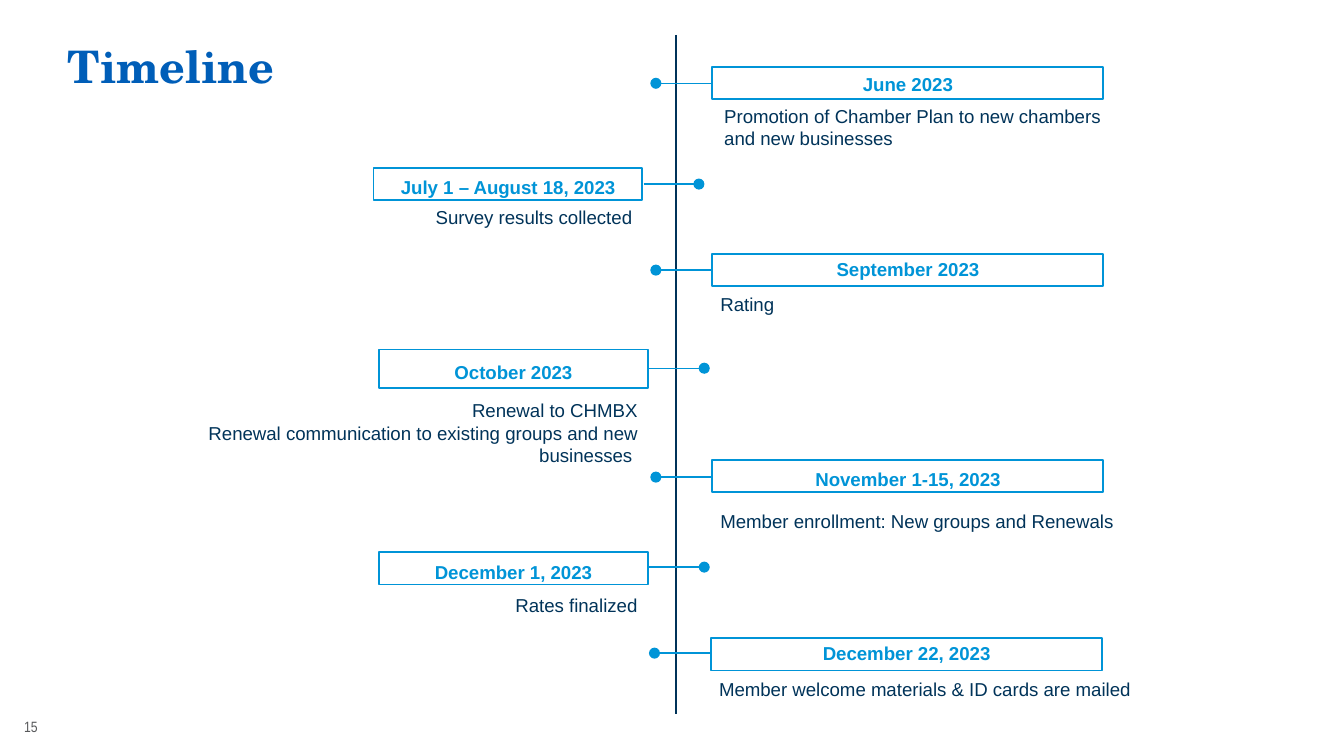
from dataclasses import dataclass

from lxml import etree
from pptx import Presentation
from pptx.dml.color import RGBColor
from pptx.enum.shapes import MSO_CONNECTOR, MSO_SHAPE
from pptx.enum.text import MSO_ANCHOR, PP_ALIGN
from pptx.oxml.ns import qn
from pptx.util import Inches, Pt

NAVY = RGBColor(0x00, 0x33, 0x59)
SKY = RGBColor(0x00, 0x94, 0xD7)
TITLE_BLUE = RGBColor(0x00, 0x5E, 0xB8)
GRAY = RGBColor(0x58, 0x59, 0x5B)

LEFT, CENTER, RIGHT = PP_ALIGN.LEFT, PP_ALIGN.CENTER, PP_ALIGN.RIGHT
TOP, MIDDLE = MSO_ANCHOR.TOP, MSO_ANCHOR.MIDDLE
RECTANGLE = MSO_SHAPE.RECTANGLE
STRAIGHT = MSO_CONNECTOR.STRAIGHT

SLIDE_WIDTH = Inches(10)
SLIDE_HEIGHT = SLIDE_WIDTH * 9 // 16
SPINE_X = 5.03


@dataclass(frozen=True)
class Side:
    """Horizontal layout shared by the events on one side of the spine."""
    box_left: float
    box_width: float
    stem_start: float
    dot_x: float
    text_left: float
    text_width: float
    align: PP_ALIGN
    anchor: MSO_ANCHOR
    insets: tuple


BEFORE = Side(2.82, 2, 4.83, 5.24, 1.39, 3.45, RIGHT, TOP, (0.1, 0.05))
AFTER = Side(5.3, 2.91, 5.3, 4.88, 5.3, 3.35, LEFT, MIDDLE, (0.06, 0.03))
AFTER_WRAPPED = Side(5.3, 2.91, 5.3, 4.88, 5.29, 3.23, LEFT, TOP, (0.1, 0.05))


@dataclass(frozen=True)
class Event:
    date: str
    details: tuple
    side: Side
    box_top: float
    stem_y: float
    text_top: float
    line_spacing: float = 1.3
    box_height: float = 0.24
    text_height: float = 0.31
    shift: float = 0


EVENTS = (
    Event("June 2023",
          ("Promotion of Chamber Plan to new chambers and new businesses",),
          AFTER_WRAPPED, 0.5, 0.62, 0.73, line_spacing=1.1),
    Event("July 1 – August 18, 2023", ("Survey results collected",),
          BEFORE, 1.25, 1.37, 1.48, shift=-0.04),
    Event("September 2023", ("Rating",),
          AFTER, 1.89, 2.01, 2.11, line_spacing=0.9),
    Event("October 2023",
          ("Renewal to CHMBX",
           "Renewal communication to existing groups and new businesses "),
          BEFORE, 2.6, 2.74, 2.92, box_height=0.29, text_height=0.62),
    Event("November 1-15, 2023",
          ("Member enrollment: New groups and Renewals",),
          AFTER, 3.42, 3.55, 3.72),
    Event("December 1, 2023", ("Rates finalized",),
          BEFORE, 4.11, 4.22, 4.37),
    Event("December 22, 2023",
          ("Member welcome materials & ID cards are mailed",),
          AFTER, 4.75, 4.86, 4.97, line_spacing=0.9, shift=-0.01),
)


def write(shape, lines, size, color, font="Arial", bold=False, align=LEFT,
          anchor=TOP, insets=(0, 0), line_spacing=None):
    frame = shape.text_frame
    frame.word_wrap = True
    frame.vertical_anchor = anchor
    frame.margin_left = frame.margin_right = Inches(insets[0])
    frame.margin_top = frame.margin_bottom = Inches(insets[1])
    frame.text = "\n".join(lines)
    for paragraph in frame.paragraphs:
        paragraph.alignment = align
        paragraph.line_spacing = line_spacing
        paragraph.font.name = font
        paragraph.font.size = Pt(size)
        paragraph.font.bold = bold
        paragraph.font.color.rgb = color


def add_text(slide, bounds, lines, size, color, **style):
    box = slide.shapes.add_textbox(*map(Inches, bounds))
    write(box, lines, size, color, **style)


def add_line(slide, start, end, color, width, dot=False):
    """Draw a straight line, with a round dot at its end if asked."""
    line = slide.shapes.add_connector(STRAIGHT, *map(Inches, (*start, *end)))
    line.line.color.rgb = color
    line.line.width = Pt(width)
    if dot:
        outline = line.line._get_or_add_ln()
        etree.SubElement(outline, qn("a:tailEnd"), type="oval")
    etree.SubElement(line._element.spPr, qn("a:effectLst"))


def add_date_box(slide, bounds, date, **style):
    box = slide.shapes.add_shape(RECTANGLE, *map(Inches, bounds))
    box.shadow.inherit = False
    box.fill.background()
    box.line.color.rgb = SKY
    box.line.width = Pt(1)
    write(box, (date,), 10, SKY, bold=True, align=CENTER, anchor=MIDDLE, **style)


def add_event(slide, event):
    side, shift = event.side, event.shift
    add_line(slide, (side.stem_start + shift, event.stem_y),
             (side.dot_x + shift, event.stem_y), SKY, 0.75, dot=True)
    add_text(slide, (side.text_left + shift, event.text_top,
                     side.text_width, event.text_height),
             event.details, 10, NAVY, align=side.align, anchor=side.anchor,
             insets=side.insets)
    add_date_box(slide, (side.box_left + shift, event.box_top,
                         side.box_width, event.box_height),
                 event.date, insets=side.insets,
                 line_spacing=event.line_spacing)


def main():
    deck = Presentation()
    deck.slide_width, deck.slide_height = SLIDE_WIDTH, SLIDE_HEIGHT
    slide = deck.slides.add_slide(deck.slide_layouts[6])

    add_text(slide, (0.18, 5.34, 1.14, 0.13), ("15",), 8, GRAY,
             font="Arial Narrow")
    add_text(slide, (0.5, 0.29, 4.13, 0.43), ("Timeline",), 24, TITLE_BLUE,
             font="TeX Gyre Schola", bold=True)
    add_line(slide, (SPINE_X, 0.26), (SPINE_X, 5.31), NAVY, 1)
    for event in EVENTS:
        add_event(slide, event)

    deck.save("out.pptx")


if __name__ == "__main__":
    main()
